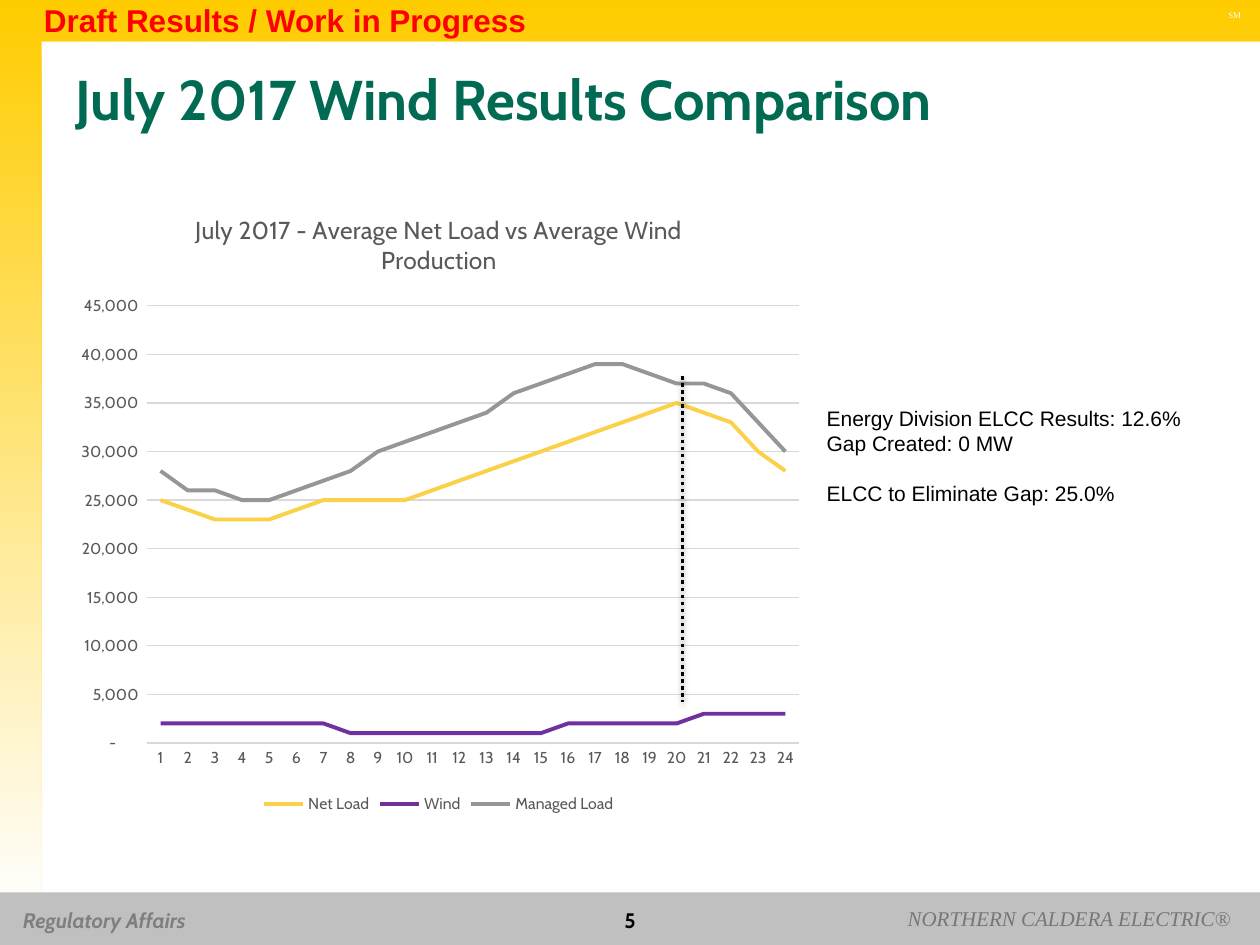
from lxml import etree
from pptx import Presentation
from pptx.chart.data import CategoryChartData
from pptx.dml.color import RGBColor
from pptx.enum.chart import XL_CHART_TYPE, XL_LEGEND_POSITION, XL_TICK_MARK
from pptx.enum.dml import MSO_LINE
from pptx.enum.shapes import MSO_CONNECTOR, MSO_SHAPE
from pptx.enum.text import MSO_ANCHOR, MSO_AUTO_SIZE, PP_ALIGN
from pptx.oxml import parse_xml
from pptx.oxml.ns import nsdecls, qn
from pptx.util import Pt

LEFT, CENTER, RIGHT = PP_ALIGN.LEFT, PP_ALIGN.CENTER, PP_ALIGN.RIGHT
MIDDLE, TOP = MSO_ANCHOR.MIDDLE, MSO_ANCHOR.TOP
NO_TICK = XL_TICK_MARK.NONE
WIDTH, HEIGHT = 720, 540
BAND = 23.5
COLORS = {
    "gold": "FFCC00", "white": "FFFFFF", "silver": "C0C0C0", "dim": "7F7F7F",
    "footer": "777777", "green": "006A53", "black": "000000", "red": "FF0000",
    "label": "595959", "grid": "D9D9D9",
    "Net Load": "FAD149", "Wind": "7030A0", "Managed Load": "969696",
}
LOADS = {
    "Net Load": [25000, 24000, 23000, 23000, 23000, 24000, 25000, 25000,
                 25000, 25000, 26000, 27000, 28000, 29000, 30000, 31000,
                 32000, 33000, 34000, 35000, 34000, 33000, 30000, 28000],
    "Wind": [2000, 2000, 2000, 2000, 2000, 2000, 2000, 1000,
             1000, 1000, 1000, 1000, 1000, 1000, 1000, 2000,
             2000, 2000, 2000, 2000, 3000, 3000, 3000, 3000],
    "Managed Load": [28000, 26000, 26000, 25000, 25000, 26000, 27000, 28000,
                     30000, 31000, 32000, 33000, 34000, 36000, 37000, 38000,
                     39000, 39000, 38000, 37000, 37000, 36000, 33000, 30000],
}
NUMBER_FORMAT = '_(* #,##0_);_(* \\(#,##0\\);_(* "-"??_);_(@_)'


def rgb(name):
    return RGBColor.from_string(COLORS[name])


class SlideBuilder:
    def __init__(self, slide, font="Cabin"):
        self.s = slide
        self.font = font

    def style(self, font, size, color, bold=False, italic=False, name=None):
        font.name, font.size = name or self.font, Pt(size)
        font.bold, font.italic = bold, italic
        font.color.rgb = rgb(color)

    def text(self, box, lines, size, color, align=LEFT, anchor=TOP, wrap=False,
             gaps=(), **style):
        """Add a text box; gaps maps a line's index to its space before."""
        tf = self.s.shapes.add_textbox(*map(Pt, box)).text_frame
        tf.word_wrap, tf.vertical_anchor = wrap, anchor
        tf.auto_size = MSO_AUTO_SIZE.NONE if wrap else MSO_AUTO_SIZE.SHAPE_TO_FIT_TEXT
        for i, line in enumerate(lines):
            p = tf.add_paragraph() if i else tf.paragraphs[0]
            p.alignment = align
            if i in gaps:
                p.space_before = Pt(gaps[i])
            r = p.add_run()
            r.text = line
            self.style(r.font, size, color, **style)

    def rect(self, box, color):
        sp = self.s.shapes.add_shape(MSO_SHAPE.RECTANGLE, *map(Pt, box))
        sp.shadow.inherit = False
        sp.fill.solid()
        sp.fill.fore_color.rgb = rgb(color)
        sp.line.fill.background()

    def gradient_outline(self, points, colors):
        start, *rest = [(Pt(x), Pt(y)) for x, y in points]
        builder = self.s.shapes.build_freeform(*start)
        builder.add_line_segments(rest, close=True)
        sp = builder.convert_to_shape()
        sp.shadow.inherit = False
        sp.fill.gradient()
        sp.fill.gradient_angle = 270
        for stop, color, position in zip(sp.fill.gradient_stops, colors, (0, 1)):
            stop.color.rgb, stop.position = rgb(color), position
        sp.line.fill.background()

    def dotted_line(self, x, top, bottom):
        line = self.s.shapes.add_connector(
            MSO_CONNECTOR.STRAIGHT, Pt(x), Pt(top), Pt(x), Pt(bottom))
        line.line.color.rgb = rgb("black")
        line.line.width = Pt(2)
        line.line.dash_style = MSO_LINE.ROUND_DOT
        line.line._ln.find(qn("a:prstDash")).set("val", "sysDot")
        line._element.spPr.append(parse_xml(
            f'<a:effectLst {nsdecls("a")}><a:outerShdw blurRad="{Pt(3.1)}" '
            f'dist="{Pt(1.6)}" dir="5400000" rotWithShape="0">'
            '<a:srgbClr val="000000"><a:alpha val="38000"/></a:srgbClr>'
            '</a:outerShdw></a:effectLst>'))

    def layout(self, parent, index, chart_size, place, **modes):
        """Place a chart part, given in points from the chart's corner."""
        for old in parent.findall(qn("c:layout")):
            parent.remove(old)
        layout = parse_xml(f'<c:layout {nsdecls("c")}><c:manualLayout/></c:layout>')
        fractions = {tag: length / full for tag, length, full
                     in zip("xywh", place, chart_size * 2)}
        values = {**modes, "xMode": "edge", "yMode": "edge", **fractions}
        for tag, value in values.items():
            etree.SubElement(layout[0], qn(f"c:{tag}")).set("val", str(value))
        parent.insert(index, layout)

    def line_chart(self, box, title, series, title_at, plot_box):
        data = CategoryChartData(number_format=NUMBER_FORMAT)
        data.categories = [str(hour) for hour in range(1, 25)]
        for name, values in series.items():
            data.add_series(name, values)
        chart = self.s.shapes.add_chart(
            XL_CHART_TYPE.LINE, *map(Pt, box), data).chart
        self.style(chart.font, 10, "black")
        chart.has_title = True
        r = chart.chart_title.text_frame.paragraphs[0].add_run()
        r.text = title
        self.style(r.font, 14, "label")
        self.layout(chart.chart_title._element, 1, box[2:], title_at)
        self.layout(chart._chartSpace.chart.plotArea, 0, box[2:], plot_box,
                    layoutTarget="inner")
        chart.has_legend = True
        chart.legend.position = XL_LEGEND_POSITION.BOTTOM
        chart.legend.include_in_layout = False
        self.style(chart.legend.font, 9, "label")
        for axis in (chart.category_axis, chart.value_axis):
            axis.major_tick_mark = axis.minor_tick_mark = NO_TICK
            self.style(axis.tick_labels.font, 9, "label")
        values = chart.value_axis
        values.minimum_scale, values.maximum_scale, values.major_unit = 0, 45000, 5000
        values.tick_labels.number_format = NUMBER_FORMAT
        values.tick_labels.number_format_is_linked = False
        values.format.line.fill.background()
        for grey in (chart.category_axis.format.line, values.major_gridlines.format.line):
            grey.color.rgb, grey.width = rgb("grid"), Pt(0.75)
        chart.plots[0].vary_by_categories = False
        for ser in chart.plots[0].series:
            ser.smooth = False
            ser.format.line.color.rgb = rgb(ser.name)
            ser.format.line.width = Pt(2.25)


def main():
    prs = Presentation()
    prs.slide_width, prs.slide_height = Pt(WIDTH), Pt(HEIGHT)
    s = SlideBuilder(prs.slides.add_slide(prs.slide_layouts[6]))

    s.gradient_outline([(0, 522), (0, 0), (WIDTH, 0), (WIDTH, BAND),
                        (BAND, BAND), (BAND, 522)], ("gold", "white"))
    s.rect((0, 510, WIDTH, 30), "silver")
    s.text((6, 514.8, 125.28, 21.6), ["Regulatory Affairs"], 12, "dim",
           bold=True, italic=True)
    s.text((694.8, 2.16, 21.6, 12.96), ["SM"], 5, "white", name="Times New Roman")
    s.text((508.32, 514.08, 202.32, 21.6), ["NORTHERN CALDERA ELECTRIC®"], 12,
           "footer", align=RIGHT, italic=True, name="Times New Roman")

    s.line_chart((36, 108, 429.12, 360),
                 "July 2017 - Average Net Load vs Average Wind Production", LOADS,
                 title_at=(73, 11), plot_box=(48, 66.8, 372.6, 249.8))

    s.text((36, 27.36, 648, 56.88), ["July 2017 Wind Results Comparison"], 32,
           "green", anchor=MIDDLE, wrap=True, bold=True)
    s.text((276, 514.08, 168, 23.76), ["5"], 12, "black", align=CENTER,
           anchor=MIDDLE, wrap=True, bold=True)
    s.text((465.3, 228.24, 218.88, 79.92),
           ["Energy Division ELCC Results: 12.6%", "Gap Created: 0 MW",
            "ELCC to Eliminate Gap: 25.0%"], 12, "black", gaps={2: 14}, name="Arial")
    s.text((18, -2.88, 293.04, 28.8), ["Draft Results / Work in Progress"], 18,
           "red", bold=True, name="Arial")
    s.dotted_line(390, 215, 401)

    prs.save("out.pptx")


if __name__ == "__main__":
    main()
